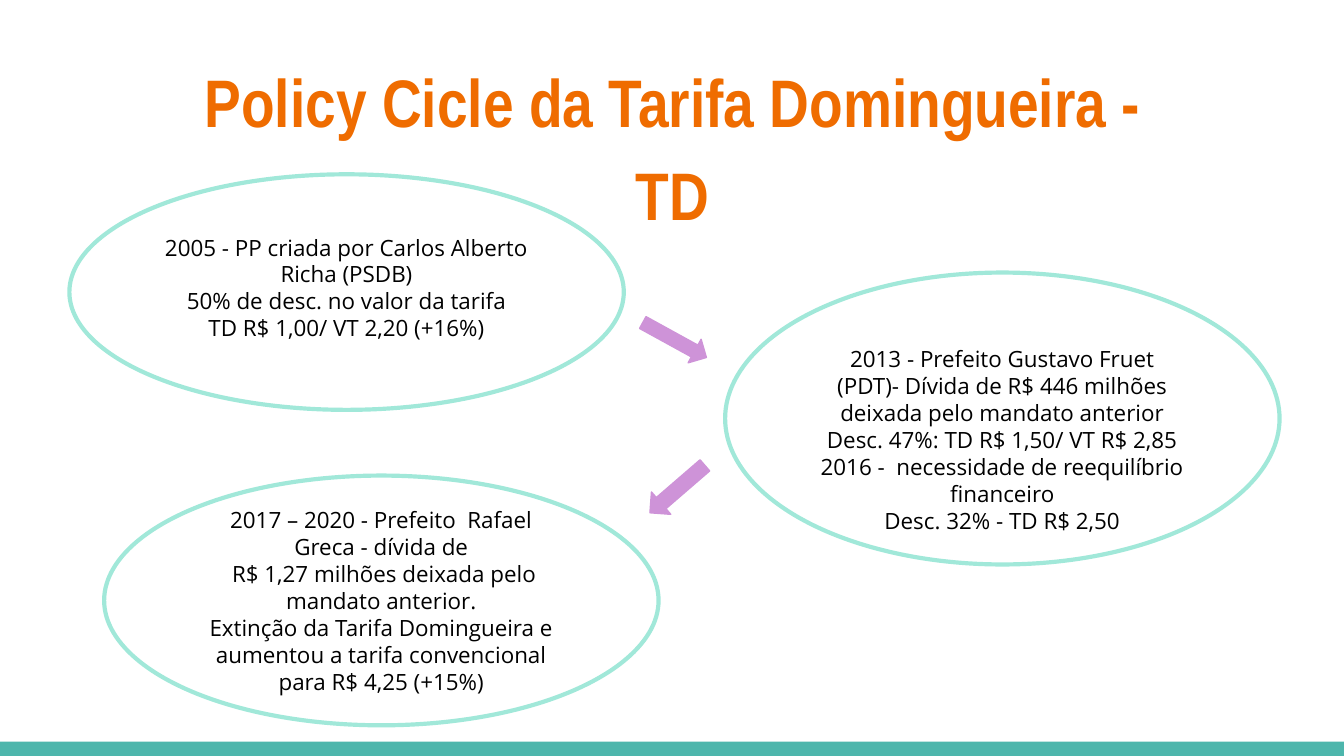
"""Build the slide on the policy cycle of the Sunday bus fare."""
import pptx
import pptx.dml.color
import pptx.enum.shapes
import pptx.enum.text
import pptx.util

Pt = pptx.util.Pt
SHAPES = pptx.enum.shapes.MSO_SHAPE
ANCHOR = pptx.enum.text.MSO_ANCHOR
CENTER = pptx.enum.text.PP_ALIGN.CENTER


def color(hex_value):
    """Return the colour for a hex string."""
    return pptx.dml.color.RGBColor.from_string(hex_value)


def add_shape(kind, box, fill=None, line=None, width=0.75):
    """Add a shape without shadow, with optional fill and line."""
    shape = slide.shapes.add_shape(kind, *[Pt(value) for value in box])
    shape.shadow.inherit = False
    if fill:
        shape.fill.solid()
        shape.fill.fore_color.rgb = color(fill)
    else:
        shape.fill.background()
    if line:
        shape.line.color.rgb = color(line)
        shape.line.width = Pt(width)
    else:
        shape.line.fill.background()
    return shape


presentation = pptx.Presentation()
presentation.slide_width = Pt(720)
presentation.slide_height = Pt(405)
slide = presentation.slides.add_slide(presentation.slide_layouts[5])

add_shape(SHAPES.RECTANGLE, (0, 397.4, 720, 7.6), fill="4DB6AC")

title = slide.shapes.title
title.left, title.top, title.width, title.height = Pt(82), Pt(18.7), Pt(556.6), Pt(50.4)
frame = title.text_frame
frame.text = "Policy Cicle da Tarifa Domingueira - TD"
frame.word_wrap = True
frame.auto_size = pptx.enum.text.MSO_AUTO_SIZE.NONE
frame.vertical_anchor = ANCHOR.TOP
frame.margin_left = frame.margin_right = frame.margin_top = frame.margin_bottom = Pt(7.2)
paragraph = frame.paragraphs[0]
paragraph.alignment = CENTER
paragraph.line_spacing = 1.15
font = paragraph.runs[0].font
font.name, font.size, font.bold = "Arial Narrow", Pt(36), True
font.color.rgb = color("EF6C00")

periods = [
    ((37.2, 93.4, 297, 126.2), 7.2, 12.2, [
        "2005 - PP criada por Carlos Alberto Richa (PSDB)",
        "50% de desc. no valor da tarifa",
        "TD R$ 1,00/ VT 2,20 (+16%)",
    ]),
    ((388.5, 146, 297, 156.4), 22.5, 0, [
        "2013 - Prefeito Gustavo Fruet (PDT)- Dívida de R$ 446 milhões deixada pelo mandato anterior",
        "Desc. 47%: TD R$ 1,50/ VT R$ 2,85",
        "2016 -  necessidade de reequilíbrio financeiro",
        "Desc. 32% - TD R$ 2,50",
    ]),
    ((55.8, 254.8, 297, 133.8), 7.2, 7.2, [
        "2017 – 2020 - Prefeito  Rafael Greca - dívida de",
        " R$ 1,27 milhões deixada pelo mandato anterior.",
        "Extinção da Tarifa Domingueira e aumentou a tarifa convencional para R$ 4,25 (+15%)",
    ]),
]
for box, top_margin, bottom_margin, lines in periods:
    ellipse = add_shape(SHAPES.OVAL, box, line="A1E8D9", width=2.25)
    frame = ellipse.text_frame
    frame.text = "\n".join(lines)
    frame.word_wrap = True
    frame.vertical_anchor = ANCHOR.MIDDLE
    frame.margin_left = frame.margin_right = Pt(7.2)
    frame.margin_top, frame.margin_bottom = Pt(top_margin), Pt(bottom_margin)
    for paragraph in frame.paragraphs:
        paragraph.alignment = CENTER
        font = paragraph.runs[0].font
        font.name, font.size = "Open Sans", Pt(12)
        font.color.rgb = color("000000")

for box, rotation in [((354.2, 162.7, 14.4, 38.9), 298.8), ((355, 242.6, 15.8, 38.9), 49.2)]:
    arrow = add_shape(SHAPES.DOWN_ARROW, box, fill="CE93D8", line="CE93D8")
    arrow.rotation = rotation

presentation.save("out.pptx")
